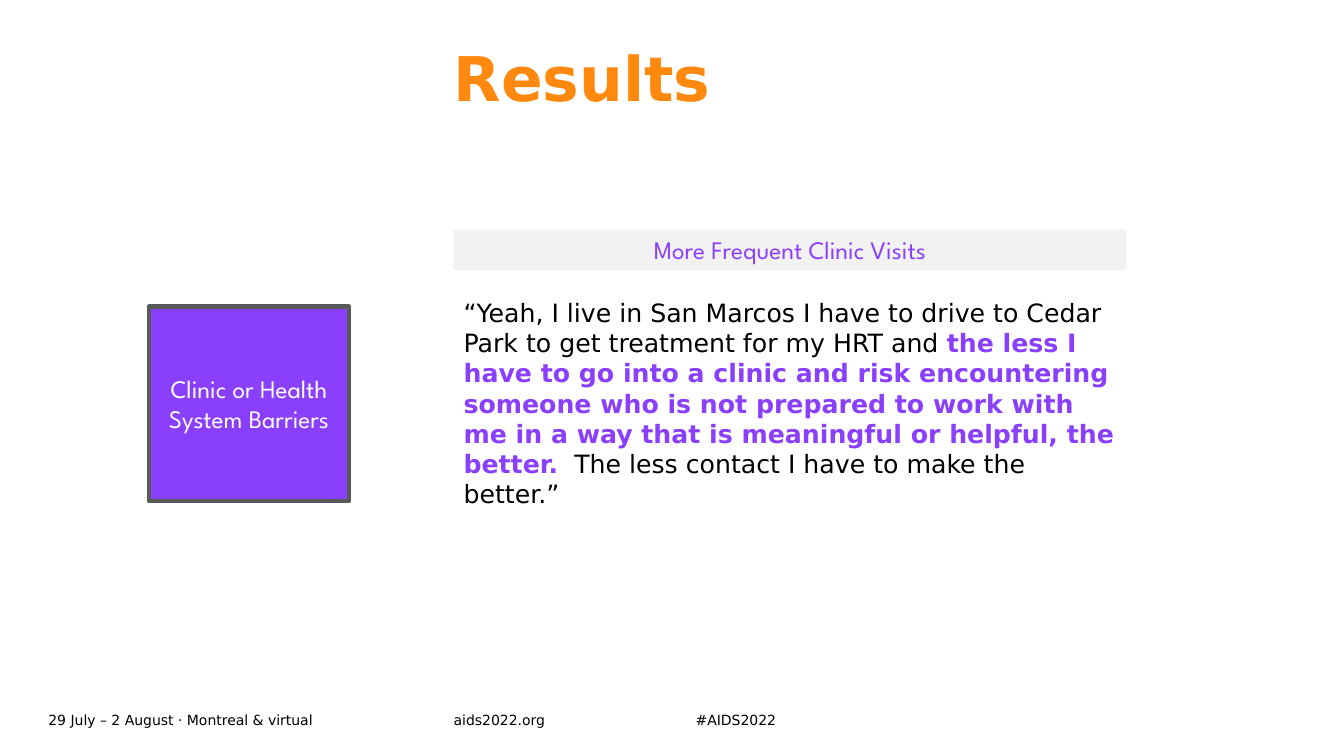
from pptx import Presentation
from pptx.dml.color import RGBColor
from pptx.enum.shapes import MSO_SHAPE
from pptx.enum.text import MSO_ANCHOR, MSO_AUTO_SIZE, PP_ALIGN
from pptx.util import Inches, Pt

COLORS = {
    "orange": "FF890E",
    "purple": "8A3FFC",
    "band": "F2F2F2",
    "border": "595959",
    "white": "FFFFFF",
    "black": "000000",
}
BODY_FONT = "DejaVu Sans"
LABEL_FONT = "League Spartan"
MARGIN, CONTENT_LEFT, CONTENT_WIDTH = 0.48, 4.5, 6.67


def rgb(name):
    return RGBColor.from_string(COLORS[name])


def write(shape, text, font, size, color, align=PP_ALIGN.LEFT,
          anchor=MSO_ANCHOR.TOP, flush=False):
    frame = shape.text_frame
    frame.word_wrap = True
    frame.auto_size = MSO_AUTO_SIZE.NONE
    frame.vertical_anchor = anchor
    if flush:
        frame.margin_left = frame.margin_right = 0
        frame.margin_top = frame.margin_bottom = 0
    paragraph = frame.paragraphs[0]
    paragraph.text = text
    paragraph.alignment = align
    paragraph.font.name = font
    paragraph.font.size = Pt(size)
    paragraph.font.color.rgb = rgb(color)
    return paragraph


prs = Presentation()
prs.slide_width, prs.slide_height = Inches(13.33), Inches(7.5)
slide = prs.slides.add_slide(prs.slide_layouts[5])

footer = [
    ("29 July – 2 August · Montreal & virtual", MARGIN, 4.02),
    ("aids2022.org", CONTENT_LEFT, 1.93),
    ("#AIDS2022", 6.9, 1.93),
]
for text, left, width in footer:
    note = slide.shapes.add_textbox(
        Inches(left), Inches(7.02), Inches(width), Inches(0.24))
    write(note, text, BODY_FONT, 10, "black", anchor=MSO_ANCHOR.MIDDLE, flush=True)

title = slide.shapes.title
title.left, title.top = Inches(CONTENT_LEFT), Inches(MARGIN)
title.width, title.height = Inches(8.35), Inches(1.34)
heading = write(title, "Results", BODY_FONT, 44, "orange", flush=True)
heading.font.bold = True
heading.line_spacing = 0.9

labels = [
    ("Clinic or Health System Barriers", (1.48, 3.04, 1.98, 1.93),
     "purple", "white", "border"),
    ("More Frequent Clinic Visits", (CONTENT_LEFT, 2.28, CONTENT_WIDTH, 0.4),
     "band", "purple", None),
]
for text, box, fill, color, border in labels:
    label = slide.shapes.add_shape(MSO_SHAPE.RECTANGLE, *map(Inches, box))
    label.shadow.inherit = False
    label.fill.solid()
    label.fill.fore_color.rgb = rgb(fill)
    if border:
        label.line.color.rgb = rgb(border)
        label.line.width = Pt(3)
    else:
        label.line.fill.background()
    write(label, text, LABEL_FONT, 18, color, PP_ALIGN.CENTER,
          MSO_ANCHOR.MIDDLE if border else MSO_ANCHOR.TOP)

quote = slide.shapes.add_textbox(
    Inches(CONTENT_LEFT), Inches(2.9), Inches(CONTENT_WIDTH), Inches(2.22))
passage = write(
    quote,
    "“Yeah, I live in San Marcos I have to drive to Cedar Park to get "
    "treatment for my HRT and ",
    BODY_FONT, 18, "black")
emphasis = passage.add_run()
emphasis.text = (
    "the less I have to go into a clinic and risk encountering someone who is "
    "not prepared to work with me in a way that is meaningful or helpful, the better.")
emphasis.font.bold = True
emphasis.font.color.rgb = rgb("purple")
passage.add_run().text = "  The less contact I have to make the better.”"

prs.save("out.pptx")
